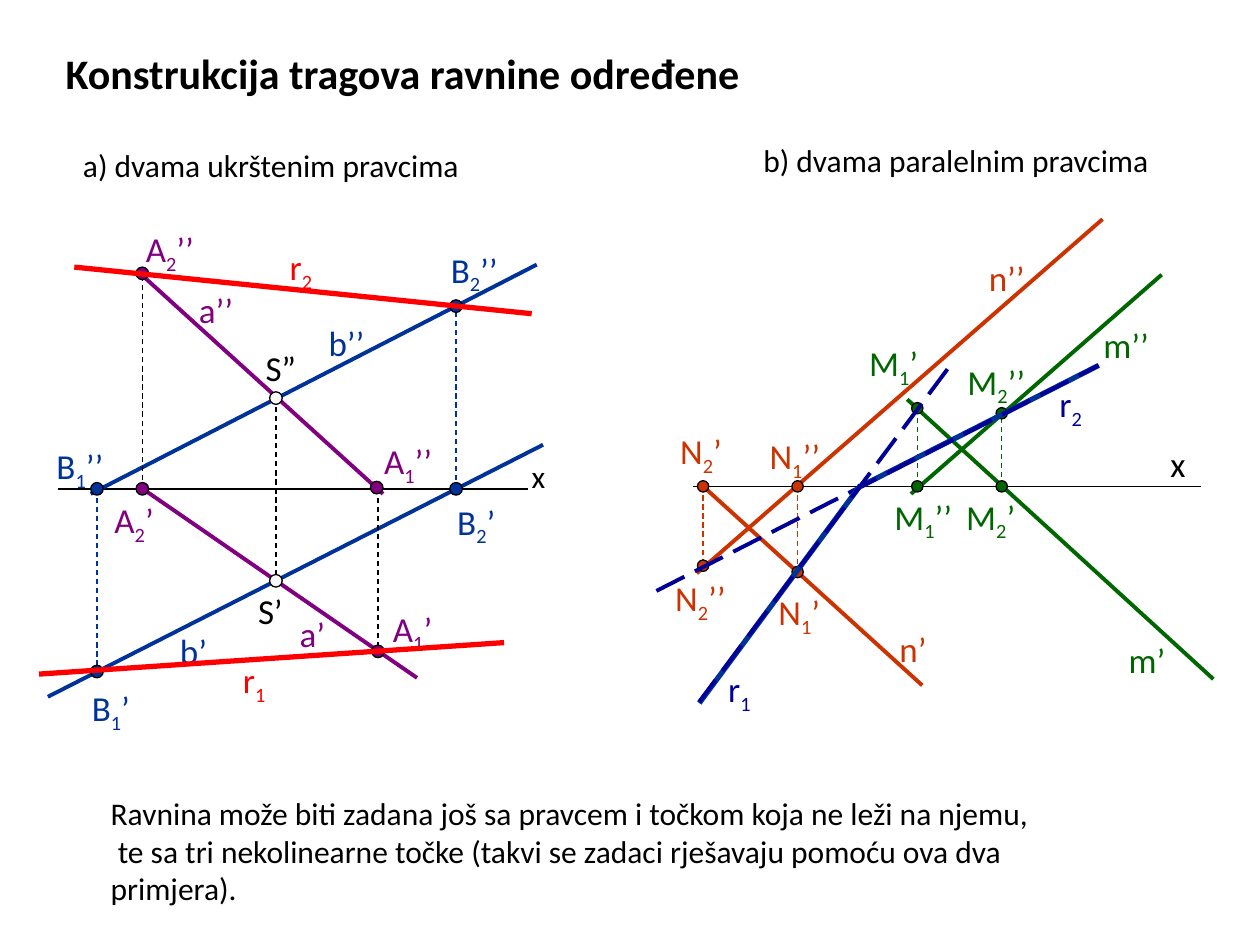
import pptx
import pptx.util
import pptx.dml.color
import pptx.enum.dml
import pptx.enum.shapes
import pptx.enum.text
from pptx.util import Inches, Pt
from lxml import etree

FONT = "Calibri"
BLACK, WHITE, RED = "000000", "F8F8F8", "FF0000"
PURPLE, BLUE, NAVY = "800080", "003399", "000099"
ORANGE, GREEN = "CC3300", "006600"
DASH = pptx.enum.dml.MSO_LINE.DASH
LONG_DASH = pptx.enum.dml.MSO_LINE.LONG_DASH

TITLE = "Konstrukcija tragova ravnine određene"
# text, left, top, width, height
CAPTIONS = [
    (["a) dvama ukrštenim pravcima"], 0.56, 1.11, 3.35, 0.4),
    (["b) dvama paralelnim pravcima"], 5.96, 1.07, 3.43, 0.4),
    (["Ravnina može biti zadana još sa pravcem i točkom koja ne leži na njemu,",
      " te sa tri nekolinearne točke (takvi se zadaci rješavaju pomoću ova dva primjera)."],
     0.78, 6.25, 7.81, 1.01),
]

# colour, x1, y1, x2, y2
GIVEN_LINES = [
    (BLUE, 0.72, 3.92, 4.26, 2.1),
    (BLUE, 0.38, 5.53, 4.31, 3.53),
    (PURPLE, 1.09, 2.15, 3.04, 3.92),
    (PURPLE, 1.09, 3.85, 3.31, 5.38),
    (ORANGE, 8.75, 1.74, 5.53, 4.55),
    (GREEN, 9.22, 2.18, 7.23, 3.92),
    (GREEN, 7.2, 3.17, 9.63, 5.39),
    (ORANGE, 5.57, 3.85, 7.32, 5.44),
]
# colour, x1, y1, x2, y2, width, dash
TRACES = [
    (RED, 0.31, 5.35, 4, 5.1, 3, None),
    (RED, 0.59, 2.12, 4.22, 2.49, 3, None),
    (BLUE, 6.83, 3.86, 8.72, 2.9, 3, None),
    (NAVY, 5.21, 4.69, 8.72, 2.9, 2.25, LONG_DASH),
    (BLUE, 6.83, 3.85, 5.55, 5.58, 3, None),
    (NAVY, 7.52, 2.93, 5.55, 5.57, 2.25, LONG_DASH),
]

# Each drawing: axis (x1, x2, y), dot diameter, and its points as
# (letter, index, primes), colour, centre x, centre y, label left, top, width
DRAWINGS = [
    ((0.46, 4.19, 3.88), 0.1, [
        (("A", "1", "’"), PURPLE, 3, 5.17, 3.02, 4.77, 0.61),
        (("A", "1", "’’"), PURPLE, 2.99, 3.87, 2.95, 3.44, 0.64),
        (("A", "2", "’"), PURPLE, 1.13, 3.88, 0.81, 3.91, 0.58),
        (("A", "2", "’’"), PURPLE, 1.13, 2.17, 1.06, 1.76, 0.6),
        (("B", "2", "’"), BLUE, 3.62, 3.88, 3.53, 3.92, 0.61),
        (("B", "2", "’’"), BLUE, 3.62, 2.43, 3.48, 1.92, 0.6),
        (("B", "1", "’’"), BLUE, 0.77, 3.88, 0.35, 3.48, 0.64),
        (("B", "1", "’"), BLUE, 0.77, 5.33, 0.63, 5.4, 0.59),
    ]),
    ((5.5, 9.53, 3.86), 0.09, [
        (("N", "1", "’’"), ORANGE, 6.33, 3.86, 6.01, 3.4, 0.63),
        (("N", "1", "’"), ORANGE, 6.33, 4.54, 6.08, 4.64, 0.56),
        (("N", "2", "’"), ORANGE, 5.58, 3.86, 5.3, 3.36, 0.6),
        (("N", "2", "’’"), ORANGE, 5.58, 4.49, 5.26, 4.53, 0.62),
        (("M", "1", "’’"), GREEN, 7.28, 3.86, 7, 3.88, 0.81),
        (("M", "1", "’"), GREEN, 7.28, 3.24, 6.8, 2.66, 0.68),
        (("M", "2", "’"), GREEN, 7.95, 3.86, 7.57, 3.88, 0.71),
        (("M", "2", "’’"), GREEN, 7.95, 3.28, 7.58, 2.81, 0.7),
    ]),
]
# letter, index, primes; colour, left, top, width, size
LINE_LABELS = [
    (("a", "", "’’"), PURPLE, 1.48, 2.24, 0.54, 20),
    (("a", "", "’"), PURPLE, 2.28, 4.81, 0.45, 20),
    (("b", "", "’"), BLUE, 1.33, 4.95, 0.43, 20),
    (("b", "", "’’"), BLUE, 2.51, 2.5, 0.53, 20),
    (("x", "", ""), BLACK, 4.12, 3.58, 0.41, 18),
    (("x", "", ""), BLACK, 9.19, 3.46, 0.51, 20),
    (("m", "", "’"), GREEN, 8.86, 5.02, 0.55, 20),
    (("m", "", "’’"), GREEN, 8.66, 2.52, 0.56, 20),
    (("n", "", "’"), ORANGE, 7.04, 4.93, 0.45, 20),
    (("n", "", "’’"), ORANGE, 7.75, 1.99, 0.6, 20),
]
TRACE_LABELS = [
    (("r", "1", ""), RED, 1.83, 5.18, 0.61, 20),
    (("r", "2", ""), RED, 2.2, 1.9, 0.61, 20),
    (("r", "2", ""), NAVY, 8.31, 2.99, 0.68, 20),
    (("r", "1", ""), NAVY, 5.68, 5.25, 0.42, 20),
    (("S", "", "”"), BLACK, 2.01, 2.7, 0.65, 20),
    (("S", "", "’"), BLACK, 1.95, 4.63, 0.43, 20),
]
INTERSECTION_X, INTERSECTION_YS = 2.19, (3.16, 4.61)


def rgb(color):
    return pptx.dml.color.RGBColor.from_string(color)


def add_run(p, text, size, color, bold=False, subscript=False):
    r = p.add_run()
    r.text = text
    r.font.name, r.font.size, r.font.bold = FONT, Pt(size), bold
    r.font.color.rgb = rgb(color)
    if subscript:
        r.font._element.set("baseline", "-25000")


def add_box(s, left, top, width, height):
    tf = s.shapes.add_textbox(*map(Inches, (left, top, width, height))).text_frame
    tf.word_wrap = True
    return tf


def add_label(s, parts, color, left, top, width, size=20):
    p = add_box(s, left, top, width, 0.44 if size == 20 else 0.37).paragraphs[0]
    for i, text in enumerate(parts):
        if text:
            add_run(p, text, size, color, subscript=i == 1)


def add_line(s, color, x1, y1, x2, y2, width=2.25, dash=None):
    ln = s.shapes.add_connector(pptx.enum.shapes.MSO_CONNECTOR.STRAIGHT,
                                *map(Inches, (x1, y1, x2, y2)))
    ln.line.color.rgb = rgb(color)
    ln.line.width = Pt(width)
    if dash:
        ln.line.dash_style = dash
    etree.SubElement(ln._element.spPr, pptx.oxml.ns.qn("a:effectLst"))


def add_dot(s, color, cx, cy, size):
    sp = s.shapes.add_shape(pptx.enum.shapes.MSO_SHAPE.OVAL, Inches(cx - size / 2),
                            Inches(cy - size / 2), Inches(size), Inches(size))
    sp.shadow.inherit = False
    sp.fill.solid()
    sp.fill.fore_color.rgb = rgb(color)
    sp.line.color.rgb = rgb(BLACK)
    sp.line.width = Pt(0.75)


def add_title(s):
    sp = s.shapes.title
    sp.left, sp.top, sp.width, sp.height = map(Inches, (0.42, 0.33, 6.04, 0.44))
    tf = sp.text_frame
    tf.auto_size = pptx.enum.text.MSO_AUTO_SIZE.NONE
    tf.vertical_anchor = pptx.enum.text.MSO_ANCHOR.TOP
    p = tf.paragraphs[0]
    p.alignment = pptx.enum.text.PP_ALIGN.LEFT
    add_run(p, TITLE, 24, BLACK, bold=True)


def main():
    prs = pptx.Presentation()
    prs.slide_width, prs.slide_height = Inches(10), Inches(7.5)
    s = prs.slides.add_slide(prs.slide_layouts[5])
    add_title(s)
    for paragraphs, *place in CAPTIONS:
        tf = add_box(s, *place)
        for i, text in enumerate(paragraphs):
            add_run(tf.add_paragraph() if i else tf.paragraphs[0], text, 18, BLACK)

    for (x1, x2, y), _, _ in DRAWINGS:
        add_line(s, BLACK, x1, y, x2, y, 0.75)
    for line in GIVEN_LINES:
        add_line(s, *line)
    add_line(s, BLACK, INTERSECTION_X, INTERSECTION_YS[0],
             INTERSECTION_X, INTERSECTION_YS[1], 0.75, DASH)
    for (_, _, axis_y), size, points in DRAWINGS:
        for parts, color, cx, cy, *place in points:
            if abs(cy - axis_y) > size:
                dash_color = BLACK if color == PURPLE else color
                add_line(s, dash_color, cx, axis_y, cx, cy, 0.75, DASH)
        for parts, color, cx, cy, *place in points:
            add_dot(s, color, cx, cy, size)
            add_label(s, parts, color, *place)
    for label in LINE_LABELS:
        add_label(s, *label)
    for trace in TRACES:
        add_line(s, *trace)
    for cy in INTERSECTION_YS:
        add_dot(s, WHITE, INTERSECTION_X, cy, 0.1)
    for label in TRACE_LABELS:
        add_label(s, *label)
    prs.save("out.pptx")


if __name__ == "__main__":
    main()
